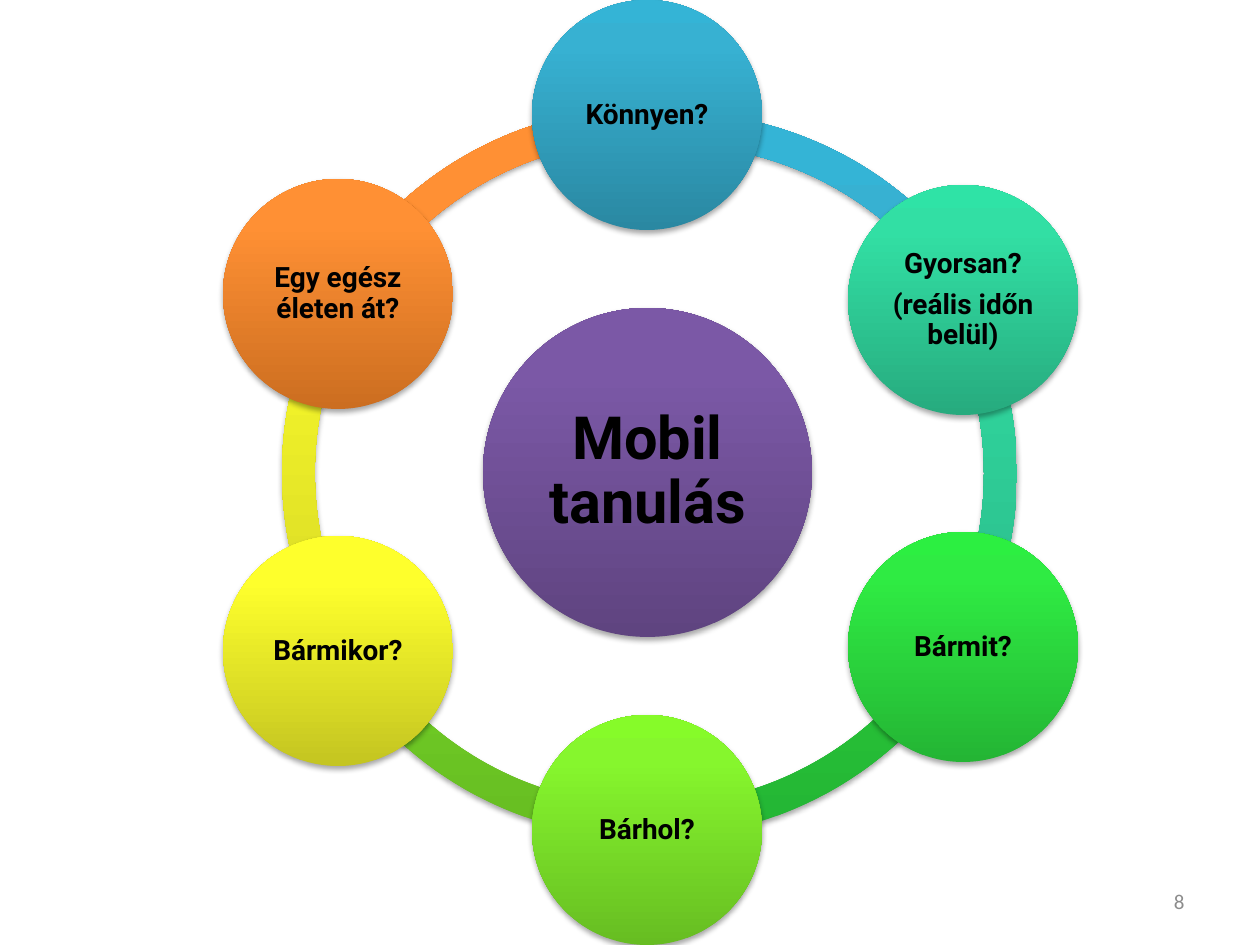
from copy import deepcopy

from lxml import etree
from pptx import Presentation
from pptx import util as u
from pptx.dml.color import RGBColor
from pptx.enum import shapes, text
from pptx.oxml.ns import qn

PX = 914400 / 126
BLACK = RGBColor(0x00, 0x00, 0x00)
GREY = RGBColor(0x8C, 0x8C, 0x8C)


def shades(*codes):
    return [RGBColor.from_string(code) for code in codes]


# Each gradient runs from the bottom edge up.
PURPLE = shades("5F4480", "7B58A6", "7C57A8")
BLUE = shades("2A88A2", "37B1D2", "34B4D6")
TEAL = shades("27AB7E", "32DFA4", "2FE3A6")
GREEN = shades("24B534", "2FEB43", "2CEF41")
LIME = shades("67BD22", "86F62D", "86FB29")
YELLOW = shades("C4C521", "FEFF2C", "FEFF2D")
ORANGE = shades("CC6E20", "FF9034", "FF9136")
STOPS = (0, 0.8, 1)

ARC_SIZE = 731
ARC_THICKNESS = 0.045
NODE_SIZE = 230
HUB_SIZE = 329

# left, top, start, end, colours; angles are in units of 100000/60000 degree
ARCS = [
    (282, 107, 126, 162, ORANGE),
    (282, 107, 90, 126, YELLOW),
    (282, 107, 54, 90, LIME),
    (286, 107, 17.55, 54.41, GREEN),
    (286, 108, 198.55, 17.45, TEAL),
    (306, 112, 161.68, 198.64, BLUE),
]
NODES = [
    (532, 0, BLUE, ["Könnyen?"]),
    (848, 185, TEAL, ["Gyorsan?", "(reális időn belül)"]),
    (848, 532, GREEN, ["Bármit?"]),
    (532, 715, LIME, ["Bárhol?"]),
    (223, 536, YELLOW, ["Bármikor?"]),
    (223, 179, ORANGE, ["Egy egész életen át?"]),
]


def px(length):
    return u.Emu(round(length * PX))


def add_span(para, words, size, font, color, bold=False):
    span = para.add_run()
    span.text = words
    span.font.size = u.Pt(size)
    span.font.name = font
    span.font.bold = bold
    span.font.color.rgb = color


def fill_gradient(shape, colors):
    shape.fill.gradient()
    shape.fill.gradient_angle = 90
    stop_list = shape._element.spPr.find(qn("a:gradFill")).find(qn("a:gsLst"))
    stop_list.append(deepcopy(stop_list[0]))
    for stop, position, color in zip(shape.fill.gradient_stops, STOPS, colors):
        stop.position = position
        stop.color.rgb = color


def add_shadow(shape):
    shape.shadow.inherit = False
    effects = shape._element.spPr.find(qn("a:effectLst"))
    shadow = etree.SubElement(effects, qn("a:outerShdw"), blurRad="40000",
                              dist="23000", dir="5400000", rotWithShape="0")
    color = etree.SubElement(shadow, qn("a:srgbClr"), val="000000")
    etree.SubElement(color, qn("a:alpha"), val="35000")


def add_glossy_shape(page, kind, left, top, size, colors):
    shape = page.shapes.add_shape(kind, px(left), px(top), px(size), px(size))
    fill_gradient(shape, colors)
    shape.line.fill.background()
    add_shadow(shape)
    return shape


def add_arc(page, left, top, start, end, colors):
    arc = add_glossy_shape(page, shapes.MSO_SHAPE.BLOCK_ARC, left, top,
                           ARC_SIZE, colors)
    for index, value in enumerate((start, end, ARC_THICKNESS)):
        arc.adjustments[index] = value


def add_circle(page, left, top, size, colors, lines, font_size, inset):
    circle = add_glossy_shape(page, shapes.MSO_SHAPE.OVAL, left, top, size, colors)
    frame = circle.text_frame
    frame.word_wrap = True
    frame.vertical_anchor = text.MSO_ANCHOR.MIDDLE
    frame.margin_left = frame.margin_right = px(inset)
    frame.margin_top = frame.margin_bottom = px(inset)
    for index, words in enumerate(lines):
        para = frame.add_paragraph() if index else frame.paragraphs[0]
        para.alignment = text.PP_ALIGN.CENTER
        para.line_spacing = 0.9
        para.space_after = u.Pt(round(0.35 * font_size))
        add_span(para, words, font_size, "Roboto", BLACK, bold=True)


def add_page_number(page, number):
    box = page.shapes.add_textbox(px(903), px(876), px(294), px(50))
    frame = box.text_frame
    frame.word_wrap = True
    frame.vertical_anchor = text.MSO_ANCHOR.MIDDLE
    para = frame.paragraphs[0]
    para.alignment = text.PP_ALIGN.RIGHT
    add_span(para, number, 12, "Calibri", GREY)


def main():
    deck = Presentation()
    deck.slide_width, deck.slide_height = px(1260), px(945)
    page = deck.slides.add_slide(deck.slide_layouts[6])
    add_page_number(page, "8")
    for arc in ARCS:
        add_arc(page, *arc)
    add_circle(page, 483, 308, HUB_SIZE, PURPLE, ["Mobil tanulás"], 34, 6)
    for left, top, colors, lines in NODES:
        add_circle(page, left, top, NODE_SIZE, colors, lines, 16, 2)
    deck.save("out.pptx")


if __name__ == "__main__":
    main()
